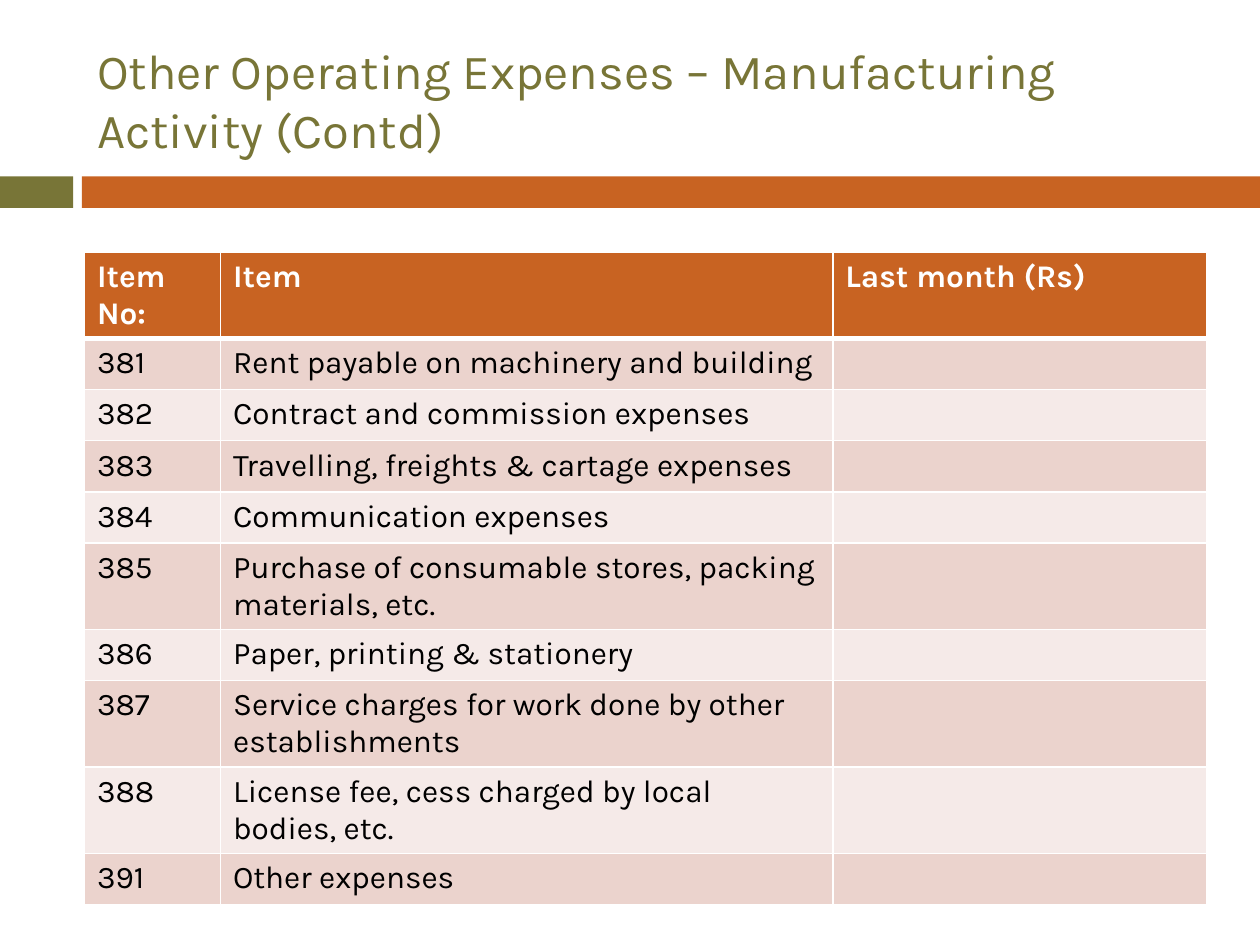
from dataclasses import dataclass

from lxml.etree import SubElement
from pptx import Presentation
from pptx.dml.color import RGBColor
from pptx.enum.shapes import MSO_SHAPE
from pptx.enum.text import MSO_ANCHOR, PP_ALIGN
from pptx.oxml import parse_xml
from pptx.oxml.ns import nsdecls, qn
from pptx.util import Inches, Pt

TITLE = "Other Operating Expenses – Manufacturing Activity (Contd)"
HEADER = ("Item No:", "Item", "Last month (Rs)")
ITEMS = [
    ("381", "Rent payable on machinery and building"),
    ("382", "Contract and commission expenses"),
    ("383", "Travelling, freights & cartage expenses"),
    ("384", "Communication expenses"),
    ("385", "Purchase of consumable stores, packing materials, etc."),
    ("386", "Paper, printing & stationery"),
    ("387", "Service charges for work done by other establishments"),
    ("388", "License fee, cess charged by local bodies, etc."),
    ("391", "Other expenses"),
]


@dataclass(frozen=True)
class Theme:
    font: str = "Karla"
    olive: str = "787537"
    orange: str = "C86322"
    white: str = "FFFFFF"
    black: str = "000000"
    bands: tuple = ("EBD3CD", "F5EAE8")
    title_size: int = 28
    table_size: int = 18


THEME = Theme()
WIDTH, HEIGHT = 10, 7.5
LEFT, CONTENT_WIDTH = 0.67, 8.92
TITLE_TOP, TITLE_HEIGHT = 0.25, 1.08
BAR_TOP, BAR_HEIGHT, BAR_SPLIT, BAR_GAP = 1.4, 0.25, 0.58, 0.07
TABLE_TOP = 2
COLUMNS = (1.08, 4.86, 2.97)
ONE_LINE, TWO_LINES = 0.39, 0.68
WRAP_AT = 40  # characters that fit on one line of the item column


def style_text(tf, size, color, bold=False):
    for p in tf.paragraphs:
        for r in p.runs:
            r.font.name = THEME.font
            r.font.size = Pt(size)
            r.font.bold = bold
            r.font.color.rgb = RGBColor.from_string(color)


def add_bar(slide, left, right, color):
    sp = slide.shapes.add_shape(MSO_SHAPE.RECTANGLE, Inches(left), Inches(BAR_TOP),
                                Inches(right - left), Inches(BAR_HEIGHT))
    sp.shadow.inherit = False
    sp.fill.solid()
    sp.fill.fore_color.rgb = RGBColor.from_string(color)
    sp.line.fill.background()


def set_borders(cell, top, bottom):
    """Draw white cell borders; top and bottom widths are in points."""
    tc_pr = cell._tc.get_or_add_tcPr()
    widths = {"lnL": 1, "lnR": 1, "lnT": top, "lnB": bottom}
    for i, (tag, width) in enumerate(widths.items()):
        ln = parse_xml(f'<a:{tag} {nsdecls("a")} w="{Pt(width)}"/>')
        fill = SubElement(ln, qn("a:solidFill"))
        SubElement(fill, qn("a:srgbClr"), val=THEME.white)
        tc_pr.insert(i, ln)


def add_title(slide):
    title = slide.shapes.title
    title.left, title.top = Inches(LEFT), Inches(TITLE_TOP)
    title.width, title.height = Inches(CONTENT_WIDTH), Inches(TITLE_HEIGHT)
    tf = title.text_frame
    tf.text = TITLE
    tf.vertical_anchor = MSO_ANCHOR.MIDDLE
    tf.paragraphs[0].alignment = PP_ALIGN.LEFT
    style_text(tf, THEME.title_size, THEME.olive)


def add_expense_table(slide):
    rows = [HEADER] + [(number, item, "") for number, item in ITEMS]
    heights = [TWO_LINES if i == 0 or len(row[1]) > WRAP_AT else ONE_LINE
               for i, row in enumerate(rows)]
    table = slide.shapes.add_table(len(rows), len(COLUMNS), Inches(LEFT), Inches(TABLE_TOP),
                                   Inches(CONTENT_WIDTH), Inches(sum(heights))).table
    for column, width in zip(table.columns, COLUMNS):
        column.width = Inches(width)
    for i, (row, height) in enumerate(zip(rows, heights)):
        table.rows[i].height = Inches(height)
        is_header = i == 0
        fill = THEME.orange if is_header else THEME.bands[(i - 1) % 2]
        color = THEME.white if is_header else THEME.black
        for j, text in enumerate(row):
            cell = table.cell(i, j)
            if text:
                cell.text_frame.text = text
            style_text(cell.text_frame, THEME.table_size, color, bold=is_header)
            cell.fill.solid()
            cell.fill.fore_color.rgb = RGBColor.from_string(fill)
            set_borders(cell, top=3 if i == 1 else 1, bottom=3 if is_header else 1)


def main():
    prs = Presentation()
    prs.slide_width, prs.slide_height = Inches(WIDTH), Inches(HEIGHT)
    slide = prs.slides.add_slide(prs.slide_layouts[5])
    add_bar(slide, 0, BAR_SPLIT, THEME.olive)
    add_bar(slide, BAR_SPLIT + BAR_GAP, WIDTH, THEME.orange)
    add_title(slide)
    add_expense_table(slide)
    prs.save("out.pptx")


if __name__ == "__main__":
    main()
